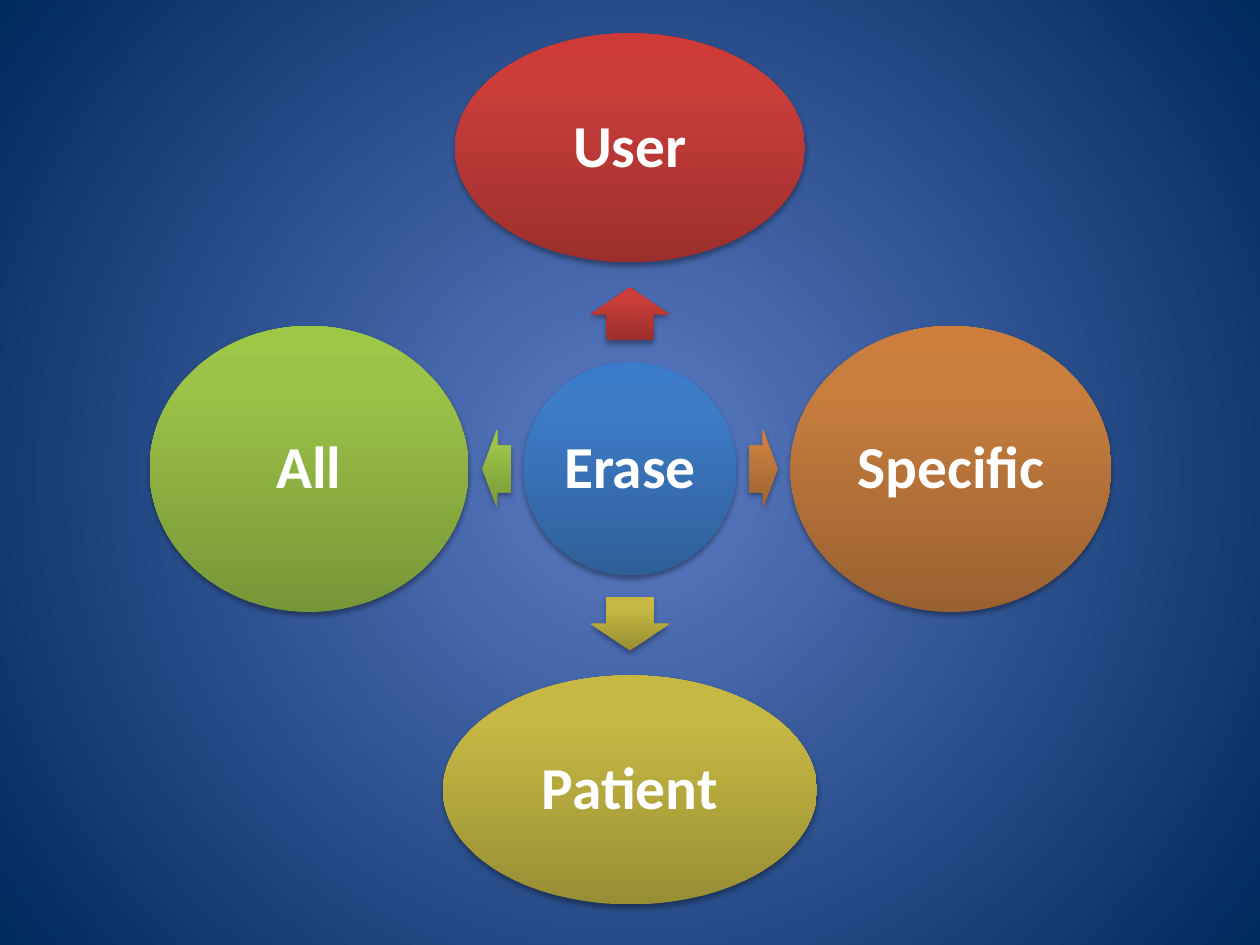
from pptx import Presentation
from pptx.dml.color import RGBColor
from pptx.enum.shapes import MSO_SHAPE
from pptx.enum.text import MSO_ANCHOR, PP_ALIGN
from pptx.oxml import parse_xml
from pptx.oxml.ns import nsdecls
from pptx.util import Pt

ELLIPSE, ARROW = MSO_SHAPE.OVAL, MSO_SHAPE.RIGHT_ARROW
MIDDLE, CENTER = MSO_ANCHOR.MIDDLE, PP_ALIGN.CENTER
SCALE = 914400 / 126

HUB = ("Erase", 213, 213, ["2F5F99", "3D7CC7", "3A7CCB"])
SPOKES = [
    ("User", 350, 229, ["9C2F2D", "CB3E3A", "CE3B37"], 270),
    ("Specific", 321, 286, ["9A6130", "C87E3F", "CC7E3C"], 0),
    ("Patient", 374, 229, ["988E34", "C6B843", "C9BB41"], 90),
    ("All", 319, 286, ["779737", "9BC348", "9DC746"], 180),
]
DIRECTIONS = {0: (1, 0), 90: (0, 1), 180: (-1, 0), 270: (0, -1)}
HUB_X, HUB_Y = 630, 469
SPOKE_DISTANCE = 321
ARROW_WIDTH = 78
SIDE_ARROW = (133, 29)
UPRIGHT_ARROW = (155, 53)

BACKGROUND = [(0, "5E7CC5"), (100, "00295C")]
RADIAL = ('<a:path path="circle"><a:fillToRect l="50000" t="50000" '
          'r="50000" b="50000"/></a:path>')
UPWARD = '<a:lin ang="16200000" scaled="0"/>'
SHADOW = ('<a:outerShdw %s blurRad="40000" dist="23000" dir="5400000" rotWithShape="0">'
          '<a:srgbClr val="000000"><a:alpha val="35000"/></a:srgbClr></a:outerShdw>')


def px(value):
    return round(value * SCALE)


def color(value):
    return RGBColor.from_string(value)


def set_gradient(owner, fill, stops, shading):
    fill.background()
    empty = owner.xpath(".//a:noFill")[0]
    marks = "".join(f'<a:gs pos="{position * 1000}"><a:srgbClr val="{value}"/></a:gs>'
                    for position, value in stops)
    empty.getparent().replace(empty, parse_xml(
        f'<a:gradFill {nsdecls("a")} rotWithShape="0">'
        f'<a:gsLst>{marks}</a:gsLst>{shading}</a:gradFill>'))


def add_figure(page, kind, x, y, width, height, colors):
    figure = page.shapes.add_shape(kind, px(x - width / 2), px(y - height / 2),
                                   px(width), px(height))
    set_gradient(figure.element, figure.fill, zip((0, 80, 100), colors), UPWARD)
    figure.line.fill.background()
    figure.shadow.inherit = False
    effects = figure.element.xpath("./p:spPr/a:effectLst")[0]
    effects.append(parse_xml(SHADOW % nsdecls("a")))
    return figure


def add_ellipse(page, label, x, y, width, height, colors):
    frame = add_figure(page, ELLIPSE, x, y, width, height, colors).text_frame
    frame.margin_left = frame.margin_right = px(6)
    frame.margin_top = frame.margin_bottom = px(6)
    frame.word_wrap = True
    frame.vertical_anchor = MIDDLE
    frame.text = label
    para = frame.paragraphs[0]
    para.alignment = CENTER
    para.line_spacing = 0.9
    font = para.runs[0].font
    font.name, font.size, font.bold = "Calibri", Pt(34), True
    font.color.rgb = color("FFFFFF")


def add_spoke(page, label, width, height, colors, angle):
    across, down = DIRECTIONS[angle]
    distance, length = SIDE_ARROW if across else UPRIGHT_ARROW
    arrow = add_figure(page, ARROW, HUB_X + across * distance, HUB_Y + down * distance,
                       length, ARROW_WIDTH, colors)
    arrow.adjustments[0], arrow.adjustments[1] = 0.6, 0.5
    arrow.rotation = angle
    add_ellipse(page, label, HUB_X + across * SPOKE_DISTANCE,
                HUB_Y + down * SPOKE_DISTANCE, width, height, colors)


def main():
    deck = Presentation()
    deck.slide_width, deck.slide_height = px(1260), px(945)
    page = deck.slides.add_slide(deck.slide_layouts[6])
    set_gradient(page.element, page.background.fill, BACKGROUND, RADIAL)
    label, width, height, colors = HUB
    add_ellipse(page, label, HUB_X, HUB_Y, width, height, colors)
    for spoke in SPOKES:
        add_spoke(page, *spoke)
    deck.save("out.pptx")


if __name__ == "__main__":
    main()
